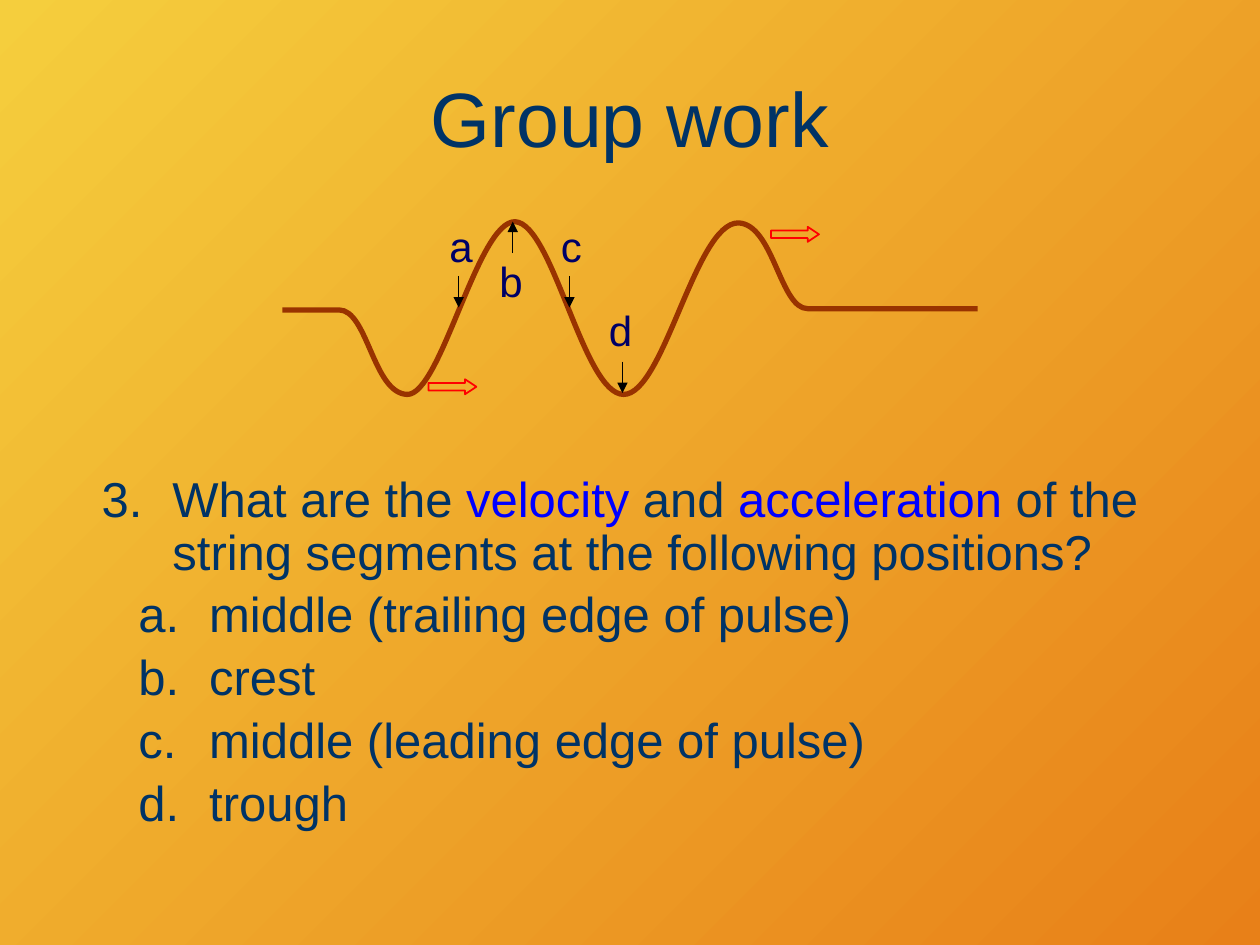
from lxml import etree
from pptx import Presentation
from pptx.dml.color import RGBColor
from pptx.enum.shapes import MSO_CONNECTOR, MSO_SHAPE
from pptx.enum.text import MSO_ANCHOR, PP_ALIGN
from pptx.oxml.ns import qn
from pptx.util import Pt

STRAIGHT = MSO_CONNECTOR.STRAIGHT
RIGHT_ARROW = MSO_SHAPE.RIGHT_ARROW
MIDDLE, TOP = MSO_ANCHOR.MIDDLE, MSO_ANCHOR.TOP
LEFT, CENTER = PP_ALIGN.LEFT, PP_ALIGN.CENTER

NAVY, BLUE, LABEL_BLUE = "003366", "0000FF", "000066"
BROWN, RED, BLACK = "993300", "FF0000", "000000"
TITLE_ONLY = 5
ARROW_LENGTH = 18

# Wave on the string: two start points, then (control, control, end) curves
WAVE_START = (161.3, 177.1)
WAVE_RISE = (193.7, 177.1)
WAVE_CURVES = [
    ((210.2, 177.1), (213.1, 224.6), (232.6, 225.4)),
    ((252, 226.1), (272.9, 126), (294.5, 126.7)),
    ((316.1, 128.2), (333.4, 225.4), (356.4, 225.4)),
    ((379.4, 225.4), (397.4, 127.4), (421.9, 127.4)),
    ((442.1, 128.2), (445.7, 176.4), (461.5, 176.4)),
    ((478.1, 176.4), (538.6, 176.4), (558.7, 176.4)),
]

# Letter, its box, and the x, start y and direction of its pointer
LABELS = [
    ("a", (252, 126, 23, 30), (262.1, 157.7, 1)),
    ("b", (283.7, 146.2, 16.6, 27.4), (293, 144.7, -1)),
    ("c", (316.8, 126, 19.4, 30), (325.4, 157.7, 1)),
    ("d", (342, 174.2, 25.2, 30), (355.7, 206.6, 1)),
]
PULSE_ARROWS = [(244.8, 216.7), (440.6, 129.6)]

QUESTION = [
    ("What are the ", NAVY), ("velocity", BLUE), (" and ", NAVY),
    ("acceleration", BLUE),
    (" of the string segments at the following positions?", NAVY),
]
POSITIONS = ["middle (trailing edge of pulse)", "crest",
             "middle (leading edge of pulse)", "trough"]


def color(hex_string):
    return RGBColor.from_string(hex_string)


def points(*values):
    return [Pt(value) for value in values]


def set_line(shape, line_color, width):
    shape.line.color.rgb = color(line_color)
    shape.line.width = Pt(width)


def write(paragraph, text, size=28, text_color=NAVY, align=LEFT):
    paragraph.alignment = align
    run = paragraph.add_run()
    run.text = text
    run.font.name = "Arial"
    run.font.size = Pt(size)
    run.font.color.rgb = color(text_color)


def add_text_box(slide, box, margins=(7.2, 3.6)):
    frame = slide.shapes.add_textbox(*points(*box)).text_frame
    frame.word_wrap = True
    frame.vertical_anchor = TOP
    frame.margin_left = frame.margin_right = Pt(margins[0])
    frame.margin_top = frame.margin_bottom = Pt(margins[1])
    return frame


def number_paragraph(paragraph, scheme, indent, level=0, start=1):
    paragraph.level = level
    paragraph.line_spacing = 0.9
    paragraph.space_before = Pt(5.6)
    properties = paragraph._p.get_or_add_pPr()
    properties.set("marL", str(Pt(indent)))
    properties.set("indent", str(Pt(-40.5)))
    number = etree.SubElement(properties, qn("a:buAutoNum"), type=scheme)
    if start > 1:
        number.set("startAt", str(start))


def add_wave(slide):
    ends = [curve[-1] for curve in WAVE_CURVES]
    builder = slide.shapes.build_freeform(*points(*WAVE_START), scale=1.0)
    builder.add_line_segments([points(*end) for end in [WAVE_RISE] + ends],
                              close=False)
    wave = builder.convert_to_shape()
    wave.shadow.inherit = False
    wave.fill.background()
    set_line(wave, BROWN, 3)
    # Turn every segment after the first into a Bézier curve
    segments = list(wave._element.iter(qn("a:lnTo")))[1:]
    for segment, curve in zip(segments, WAVE_CURVES):
        bezier = etree.Element(qn("a:cubicBezTo"))
        for x, y in curve:
            etree.SubElement(bezier, qn("a:pt"), x=str(Pt(x) - wave.left),
                             y=str(Pt(y) - wave.top))
        segment.getparent().replace(segment, bezier)


def add_pulse_arrow(slide, left, top):
    arrow = slide.shapes.add_shape(RIGHT_ARROW, *points(left, top, 27.4, 8.6))
    arrow.adjustments[0] = 0.5
    arrow.adjustments[1] = 0.753
    arrow.shadow.inherit = False
    arrow.fill.background()
    set_line(arrow, RED, 1)


def add_pointer(slide, x, start, direction):
    tip = start + direction * ARROW_LENGTH
    pointer = slide.shapes.add_connector(STRAIGHT, *points(x, start, x, tip))
    set_line(pointer, BLACK, 0.75)
    etree.SubElement(pointer.line._get_or_add_ln(), qn("a:tailEnd"),
                     type="triangle")
    etree.SubElement(pointer._element.spPr, qn("a:effectLst"))


def add_title(slide, text):
    title = slide.shapes.title
    title.left, title.top, title.width, title.height = points(36, 21.6, 648, 90)
    title.text_frame.vertical_anchor = MIDDLE
    write(title.text_frame.paragraphs[0], text, size=44, align=CENTER)


def add_question(slide):
    frame = add_text_box(slide, (36, 267.8, 648, 236.2))
    question = frame.paragraphs[0]
    number_paragraph(question, "arabicPeriod", 55.5, start=3)
    for text, text_color in QUESTION:
        write(question, text, text_color=text_color)
    for position in POSITIONS:
        paragraph = frame.add_paragraph()
        number_paragraph(paragraph, "alphaLcPeriod", 76.5, level=1)
        write(paragraph, position)


def set_background(slide):
    fill = slide.background.fill
    fill.gradient()
    fill.gradient_angle = 315
    for stop, stop_color in zip(fill.gradient_stops, ("F5CE3D", "E88018")):
        stop.color.rgb = color(stop_color)


def main():
    presentation = Presentation()
    presentation.slide_width, presentation.slide_height = points(720, 540)
    slide = presentation.slides.add_slide(
        presentation.slide_layouts[TITLE_ONLY])
    set_background(slide)
    add_title(slide, "Group work")

    # Wave diagram
    add_wave(slide)
    for left, top in PULSE_ARROWS:
        add_pulse_arrow(slide, left, top)
    for letter, box, pointer in LABELS:
        add_pointer(slide, *pointer)
        frame = add_text_box(slide, box, margins=(0, 0))
        write(frame.paragraphs[0], letter, size=24, text_color=LABEL_BLUE,
              align=CENTER)

    # Numbered question with lettered positions
    add_question(slide)
    presentation.save("out.pptx")


if __name__ == "__main__":
    main()
